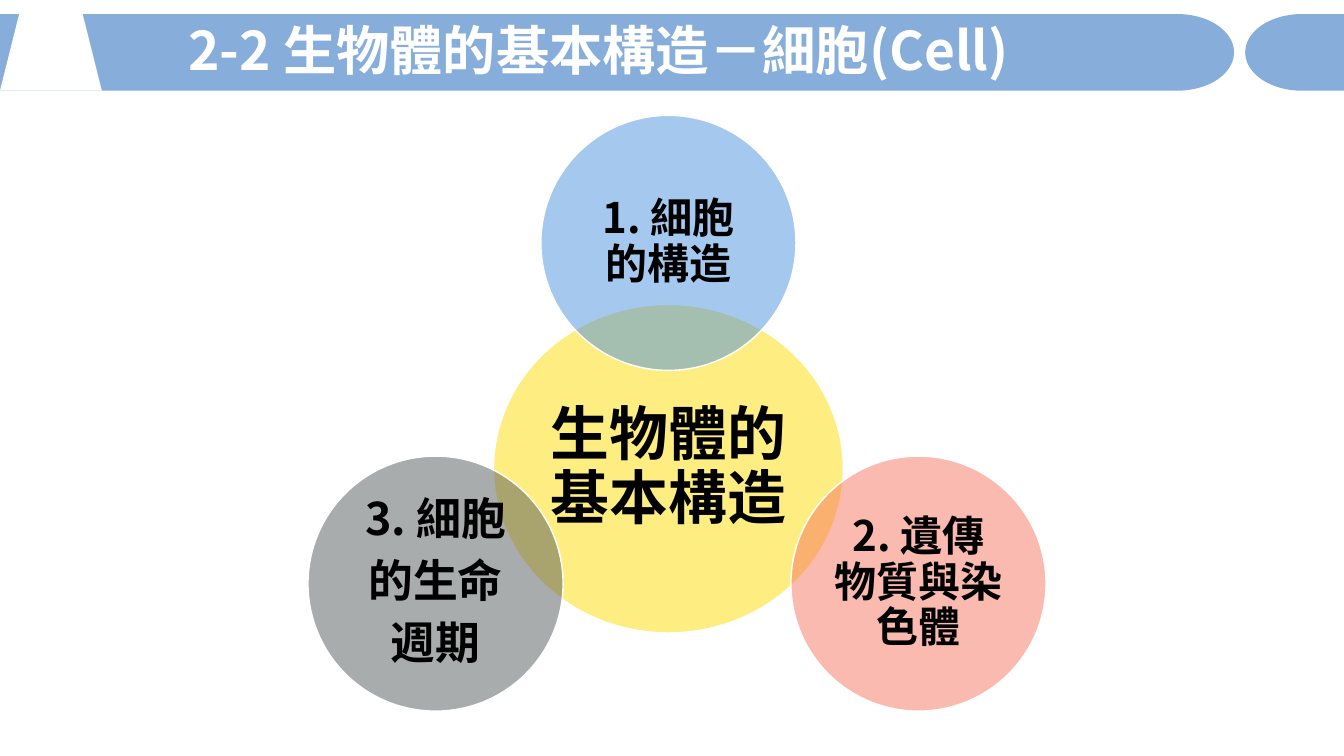
from math import cos, pi, sin

from lxml.etree import SubElement
from pptx import Presentation
from pptx.dml.color import RGBColor as Rgb
from pptx.enum.shapes import MSO_SHAPE as Kind
from pptx.enum.text import MSO_ANCHOR as Anchor, MSO_AUTO_SIZE as Fit, PP_ALIGN as Align
from pptx.oxml.ns import qn
from pptx.util import Inches, Pt

FONT = "Noto Sans CJK SC"
HUES = {
    "bar": "87ADDB", "white": "FFFFFF", "black": "000000",
    "core": "FEDC04", "blue": "4C93DF", "red": "F77660", "gray": "555A5C",
}
TOP, HIGH, WIDE = 0.14, 0.76, 13.33
ROUND = 0.56


class Deck:
    def __init__(self):
        self.prs = Presentation()
        self.prs.slide_width = Inches(WIDE)
        self.prs.slide_height = Inches(7.5)
        self.slide = self.prs.slides.add_slide(self.prs.slide_layouts[5])
        self.shapes = self.slide.shapes

    def paint(self, shape, hue):
        shape.shadow.inherit = False
        shape.fill.solid()
        shape.fill.fore_color.rgb = Rgb.from_string(HUES[hue])
        shape.line.fill.background()

    def bar(self, edge, base, side):
        half = HIGH / 2
        arc = [(base + side * ROUND * sin(pi * i / 40), TOP + half - half * cos(pi * i / 40))
               for i in range(41)]
        pen = self.shapes.build_freeform(Inches(edge), Inches(TOP), scale=1.0)
        pen.add_line_segments([(Inches(x), Inches(y)) for x, y in arc + [(edge, TOP + HIGH)]])
        self.paint(pen.convert_to_shape(), "bar")

    def mark(self, left, wide):
        box = [Inches(v) for v in (left, TOP, wide, HIGH)]
        self.paint(self.shapes.add_shape(Kind.TRAPEZOID, *box), "white")

    def text(self, frame, lines, size, hue, align, space, before=0, after=0, pad=None):
        frame.word_wrap = True
        frame.auto_size = Fit.NONE
        frame.vertical_anchor = Anchor.MIDDLE
        if pad is not None:
            frame.margin_left = frame.margin_right = Inches(pad)
            frame.margin_top = frame.margin_bottom = Inches(pad)
        for i, line in enumerate(lines):
            para = frame.add_paragraph() if i else frame.paragraphs[0]
            para.alignment = align
            para.line_spacing = space
            para.space_before, para.space_after = Pt(before), Pt(after)
            run = para.add_run()
            run.text = line
            font = run.font
            font.name, font.size, font.bold = FONT, Pt(size), True
            font.color.rgb = Rgb.from_string(HUES[hue])
            SubElement(run._r.get_or_add_rPr(), qn("a:ea")).set("typeface", FONT)

    def title(self, words, box):
        head = self.shapes.title
        head.left, head.top, head.width, head.height = [Inches(v) for v in box]
        self.text(head.text_frame, [words], 38, "white", Align.LEFT, 0.9, before=10)
        tree = head._element.getparent()
        tree.remove(head._element)
        tree.append(head._element)

    def disc(self, mid, wide, high, hue, lines, size, space=0.9, pad=0.04):
        x, y = mid
        box = [Inches(v) for v in (x - wide / 2, y - high / 2, wide, high)]
        oval = self.shapes.add_shape(Kind.OVAL, *box)
        self.paint(oval, hue)
        tone = oval._element.spPr.find(qn("a:solidFill"))[0]
        SubElement(tone, qn("a:alpha")).set("val", "50000")
        oval.line.color.rgb = Rgb.from_string(HUES["white"])
        oval.line.width = Pt(1)
        w, h = wide * 0.707, high * 0.707
        area = [Inches(v) for v in (x - w / 2, y - h / 2, w, h)]
        note = self.shapes.add_textbox(*area)
        self.text(note.text_frame, lines, size, "black", Align.CENTER, space,
                  after=size * 0.35, pad=pad)


def main():
    deck = Deck()
    deck.bar(0, 11.68, 1)
    deck.mark(0, 1.01)
    deck.bar(WIDE, 12.91, -1)
    deck.title("2-2 生物體的基本構造－細胞(Cell)", (1.77, 0.2, 9.92, 0.65))
    deck.disc((6.63, 4.65), 3.47, 3.26, "core", ["生物體的基本構造"], 42)
    size = 2.53
    deck.disc((6.63, 2.41), size, size, "blue", ["1. 細胞的構造"], 30)
    deck.disc((9.11, 5.79), size, size, "red", ["2. 遺傳物質與染色體"], 30)
    deck.disc((4.32, 5.79), size, size, "gray", ["3. 細胞", "的生命", "週期"], 32, Pt(33))
    deck.prs.save("out.pptx")


if __name__ == "__main__":
    main()
